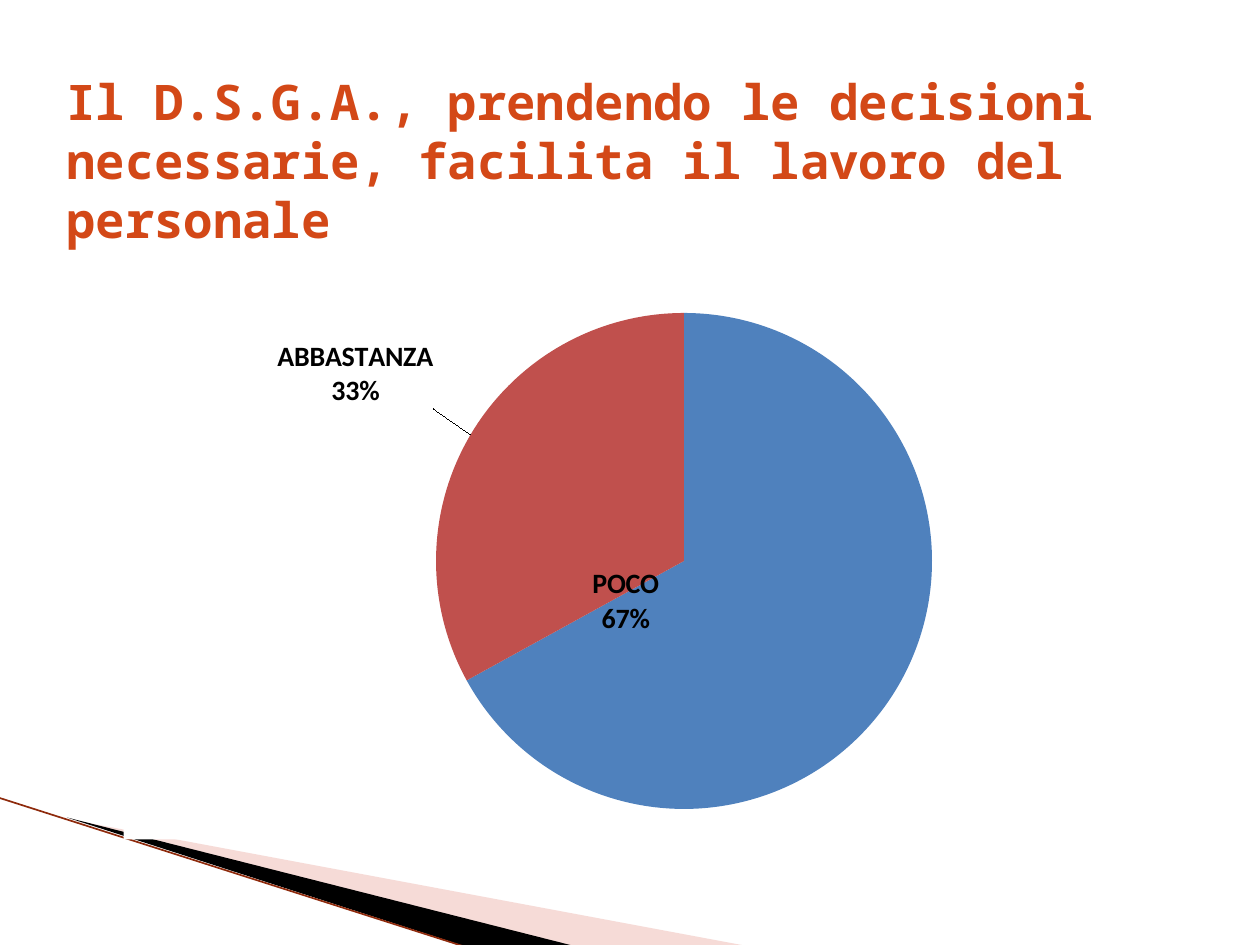
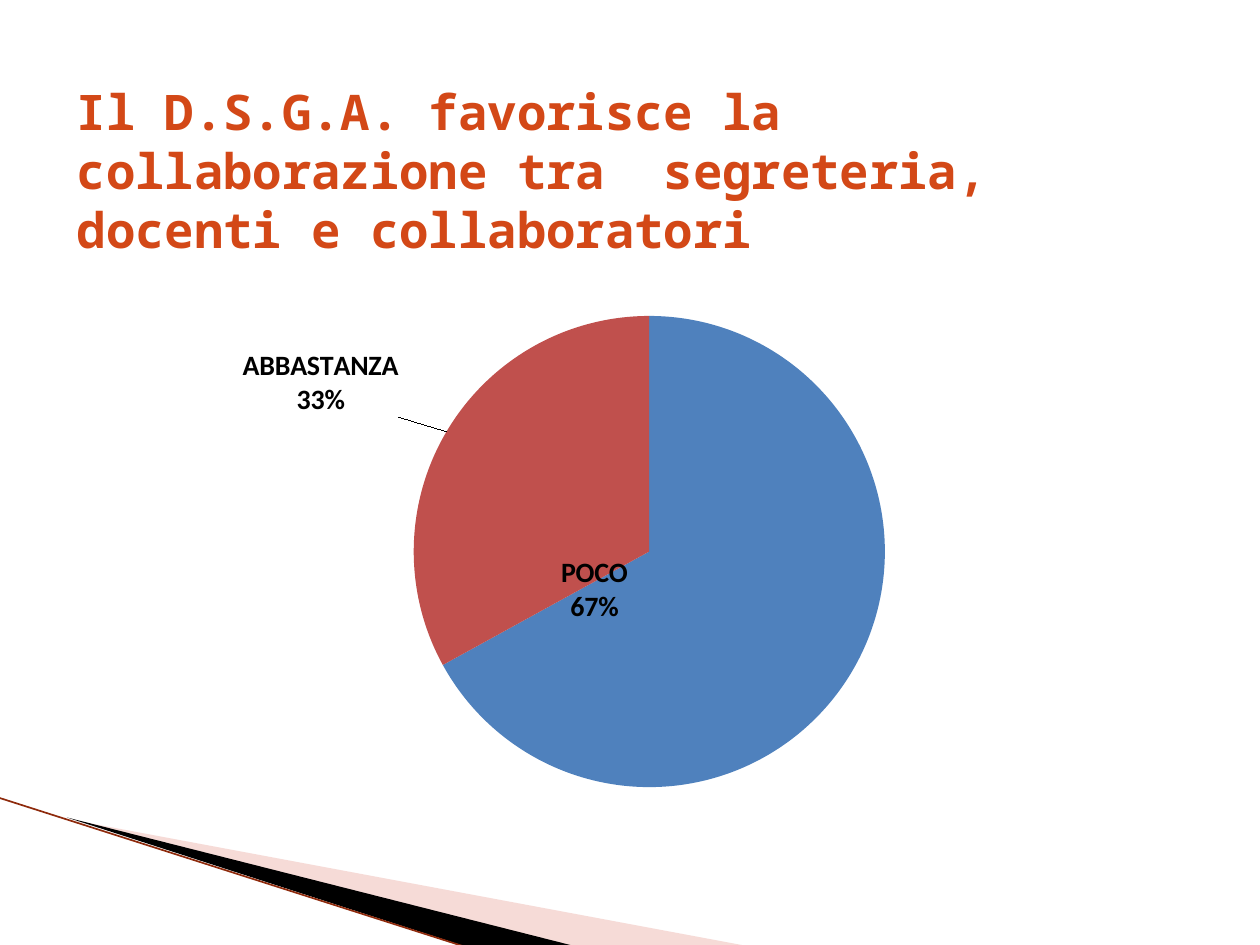
from pptx import Presentation
from pptx.chart.data import CategoryChartData
from pptx.dml.color import RGBColor
from pptx.enum.chart import XL_CHART_TYPE
from pptx.enum.shapes import MSO_CONNECTOR
from pptx.enum.text import MSO_ANCHOR
from pptx.oxml import parse_xml
from pptx.oxml.ns import nsdecls, qn
from pptx.util import Cm, Pt
from lxml import etree

PIE = XL_CHART_TYPE.PIE
STRAIGHT = MSO_CONNECTOR.STRAIGHT
TOP = MSO_ANCHOR.TOP

TITLE_COLOR = RGBColor(0xD3, 0x48, 0x17)
BLACK = RGBColor(0, 0, 0)
WHITE = RGBColor(0xFF, 0xFF, 0xFF)
PINK = RGBColor(0xE9, 0xA5, 0x9D)
EDGE = RGBColor(0x8E, 0x2A, 0x0C)
SLICE_COLORS = [RGBColor(0x4F, 0x81, 0xBD), RGBColor(0xC0, 0x50, 0x4D),
                RGBColor(0x9B, 0xBB, 0x59)]

TITLE_FONT = {"name": "Noto Sans Mono", "size": Pt(28), "bold": True}
CHART_FONT = {"name": "Calibri", "size": Pt(10)}
LABEL_FONT = {"name": "Calibri", "size": Pt(16), "bold": True}

# Content: boxes are left, top, width, height; all lengths in cm
ANSWERS = [("POCO", 67), ("ABBASTANZA", 33), ("MOLTO", 0)]
SLIDES = [
    {"title": "Il D.S.G.A., prendendo le decisioni necessarie, "
              "facilita il lavoro del personale",
     "title_box": (1.09, 1.32, 23.39, 2.64),
     "chart_box": (2.49, 5.72, 20.8, 11.2),
     "pie_center": (13.79, 11.31), "pie_radius": 5,
     "label_shifts": [(-0.16, -0.04), (-0.03, -0.04)]},
    {"title": "Il D.S.G.A. favorisce la collaborazione tra  segreteria, "
              "docenti e collaboratori",
     "title_box": (1.3, 1.52, 22.4, 2.64),
     "chart_box": (1.7, 5.72, 21.01, 10.82),
     "pie_center": (13.09, 11.12), "pie_radius": 4.75,
     "label_shifts": [(-0.15, -0.04), (-0.04, -0.02)]},
]
LABEL_POSITIONS = ["ctr", "outEnd"]

# Corner band: outline points, colour, opacity in percent
BANDS = [
    ([(1.4, 16.52), (15.11, 19.08), (11.58, 19.08)], PINK, 40),
    ([(1.35, 16.48), (11.61, 19.08), (9.45, 19.1)], BLACK, 100),
]
BAND_EDGE = (-0.03, 16.08, 9.42, 19.1)


def set_font(font, values, color):
    for name, value in values.items():
        setattr(font, name, value)
    font.color.rgb = color


def add_corner_band(slide):
    for points, color, opacity in BANDS:
        corners = [(Cm(x), Cm(y)) for x, y in points]
        builder = slide.shapes.build_freeform(*corners[0], scale=1.0)
        builder.add_line_segments(corners[1:], close=True)
        shape = builder.convert_to_shape()
        shape.shadow.inherit = False
        shape.fill.solid()
        shape.fill.fore_color.rgb = color
        shape.line.fill.background()
        if opacity < 100:
            fill_color = shape._element.spPr.find(".//" + qn("a:srgbClr"))
            alpha = etree.SubElement(fill_color, qn("a:alpha"))
            alpha.set("val", str(opacity * 1000))
    edge = slide.shapes.add_connector(STRAIGHT, *map(Cm, BAND_EDGE))
    edge.line.color.rgb = EDGE
    edge.line.width = Pt(0.95)
    etree.SubElement(edge._element.spPr, qn("a:effectLst"))


def add_title(slide, text, box):
    frame = slide.shapes.add_textbox(*map(Cm, box)).text_frame
    frame.word_wrap = True
    frame.vertical_anchor = TOP
    run = frame.paragraphs[0].add_run()
    run.text = text
    set_font(run.font, TITLE_FONT, TITLE_COLOR)


def manual_layout(**values):
    entries = "".join(f'<c:{name} val="{value}"/>' for name, value in values.items())
    return (f'<c:layout {nsdecls("c")}><c:manualLayout>{entries}'
            '</c:manualLayout></c:layout>')


def add_labels(series, shifts):
    shown = ('<c:showLegendKey val="0"/><c:showVal val="0"/><c:showCatName val="1"/>'
             '<c:showSerName val="0"/><c:showPercent val="1"/>'
             '<c:showBubbleSize val="0"/><c:separator>\n</c:separator>')
    labels = "".join(
        f'<c:dLbl><c:idx val="{index}"/>{manual_layout(x=x, y=y)}'
        f'<c:dLblPos val="{position}"/>{shown}</c:dLbl>'
        for index, ((x, y), position) in enumerate(zip(shifts, LABEL_POSITIONS)))
    hidden = f'<c:dLbl><c:idx val="{len(shifts)}"/><c:delete val="1"/></c:dLbl>'
    series._element.find(qn("c:cat")).addprevious(parse_xml(
        f'<c:dLbls {nsdecls("c", "a")}>{labels}{hidden}{shown}'
        '<c:showLeaderLines val="1"/></c:dLbls>'))
    set_font(series.data_labels.font, LABEL_FONT, BLACK)
    for index in range(len(shifts)):
        set_font(series.points[index].data_label.font, LABEL_FONT, BLACK)


def add_pie(slide, content):
    left, top, width, height = content["chart_box"]
    data = CategoryChartData()
    data.categories = [answer for answer, share in ANSWERS]
    data.add_series("Series 1", [share for answer, share in ANSWERS])
    chart = slide.shapes.add_chart(
        PIE, *map(Cm, content["chart_box"]), data).chart
    chart.has_legend = False
    chart.has_title = False
    set_font(chart.font, CHART_FONT, BLACK)
    plot = chart.plots[0]
    plot.vary_by_categories = True
    series = plot.series[0]
    for index, color in enumerate(SLICE_COLORS):
        fill = series.points[index].format.fill
        fill.solid()
        fill.fore_color.rgb = color
    add_labels(series, content["label_shifts"])

    # Pie placed as fractions of the chart box
    center_x, center_y = content["pie_center"]
    radius = content["pie_radius"]
    plot_area = chart._chartSpace.chart.plotArea
    for layout in plot_area.findall(qn("c:layout")):
        plot_area.remove(layout)
    plot_area.insert(0, parse_xml(manual_layout(
        layoutTarget="inner", xMode="edge", yMode="edge",
        x=(center_x - radius - left) / width,
        y=(center_y - radius - top) / height,
        w=2 * radius / width, h=2 * radius / height)))

    # White chart background, which covers part of the band
    chart._chartSpace.chart.addnext(parse_xml(
        f'<c:spPr {nsdecls("c", "a")}><a:solidFill><a:srgbClr val="{WHITE}"/>'
        '</a:solidFill><a:ln><a:noFill/></a:ln></c:spPr>'))


def main():
    presentation = Presentation()
    presentation.slide_width, presentation.slide_height = Cm(25.4), Cm(19.05)
    for content in SLIDES:
        slide = presentation.slides.add_slide(presentation.slide_layouts[6])
        add_corner_band(slide)
        add_title(slide, content["title"], content["title_box"])
        add_pie(slide, content)
    presentation.save("out.pptx")


if __name__ == "__main__":
    main()
